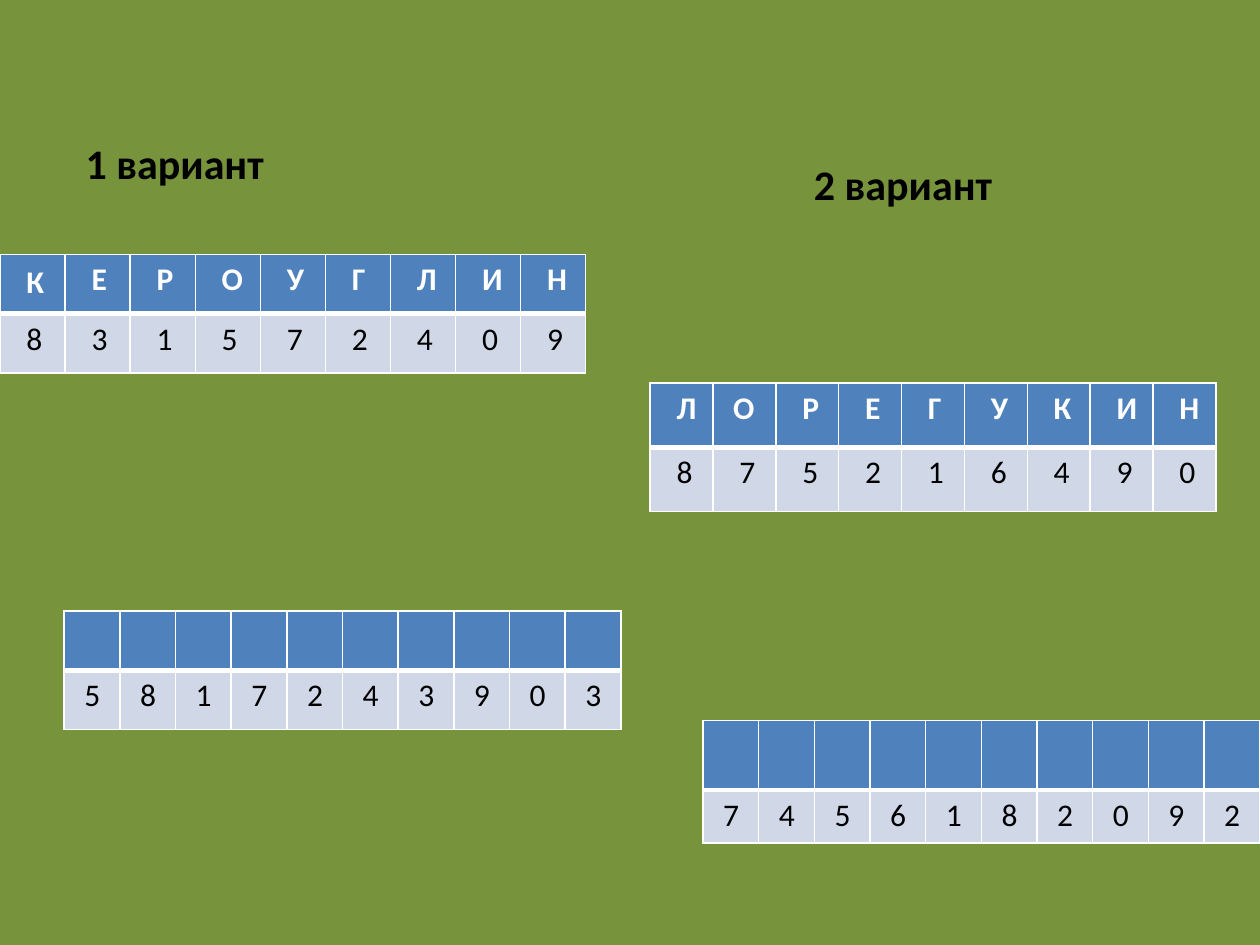
import pptx
import pptx.dml.color
import pptx.enum.text
import pptx.oxml
import pptx.oxml.ns
import pptx.util

Inches = pptx.util.Inches
RGBColor = pptx.dml.color.RGBColor

GREEN = RGBColor(0x77, 0x93, 0x3C)
BLUE = RGBColor(0x4F, 0x81, 0xBD)
PALE_BLUE = RGBColor(0xD0, 0xD8, 0xE8)
WHITE = RGBColor(0xFF, 0xFF, 0xFF)
BLACK = RGBColor(0, 0, 0)

HEADER_FONT = {"name": "Calibri", "size": pptx.util.Pt(18), "bold": True}
BODY_FONT = {"name": "Calibri", "size": pptx.util.Pt(18), "bold": False}
HEADING_FONT = {"name": "Calibri", "size": pptx.util.Pt(24), "bold": True}

# Box (left, top, width, height), text, left text margin
HEADINGS = [
    ((0.5, 0.52, 4.42, 1.02), "1 вариант", 0.18),
    ((5.08, 0.92, 4.42, 0.79), "2 вариант", 1.38),
]

# Box (left, top, width), row heights, letters, digits, left cell margin
CIPHER_TABLES = [
    ((0.51, 4.85, 4.42), (0.47, 0.47), " " * 10, "5817243903", 0.16),
    ((5.16, 3.04, 4.49), (0.51, 0.51), "ЛОРЕГУКИН", "875216490", 0.21),
    ((0, 2.02, 4.65), (0.47, 0.47), "КЕРОУГЛИН", "831572409", 0.21),
    ((5.58, 5.72, 4.42), (0.55, 0.42), " " * 10, "7456182092", 0.16),
]


def write_text(paragraph, text, font_values, color):
    paragraph.text = text
    for name, value in font_values.items():
        setattr(paragraph.font, name, value)
    paragraph.font.color.rgb = color


def add_heading(slide, box, text, margin):
    shape = slide.shapes.add_textbox(*map(Inches, box))
    frame = shape.text_frame
    frame.word_wrap = True
    frame.vertical_anchor = pptx.enum.text.MSO_ANCHOR.BOTTOM
    frame.margin_left = Inches(margin)
    write_text(frame.paragraphs[0], text, HEADING_FONT, BLACK)


def add_borders(cell, widths):
    """Draw white cell edges; widths maps L, R, T and B to points."""
    properties = cell._tc.get_or_add_tcPr()
    for side, points in widths.items():
        properties.append(pptx.oxml.parse_xml(
            f'<a:ln{side} {pptx.oxml.ns.nsdecls("a")} w="{pptx.util.Pt(points)}">'
            f'<a:solidFill><a:srgbClr val="{WHITE}"/></a:solidFill></a:ln{side}>'))


def add_cipher_table(slide, box, row_heights, letters, digits, margin):
    """Place a row of letters above the row of digits that stand for them."""
    left, top, width = box
    frame = slide.shapes.add_table(
        2, len(digits), Inches(left), Inches(top), Inches(width), Inches(sum(row_heights)))
    table = frame.table
    for row, height in zip(table.rows, row_heights):
        row.height = Inches(height)
    for column in table.columns:
        column.width = Inches(width / len(digits))
    row_styles = [
        (letters, HEADER_FONT, WHITE, BLUE, {"L": 1, "R": 1, "T": 1, "B": 3}),
        (digits, BODY_FONT, BLACK, PALE_BLUE, {"L": 1, "R": 1, "T": 3, "B": 1}),
    ]
    for row, (text, font, color, fill, borders) in zip(table.rows, row_styles):
        for cell, character in zip(row.cells, text):
            cell.margin_left = Inches(margin)
            cell.margin_right = Inches(0.05)
            add_borders(cell, borders)
            cell.fill.solid()
            cell.fill.fore_color.rgb = fill
            write_text(cell.text_frame.paragraphs[0], character.strip(), font, color)
    return table


def build_slide(presentation):
    slide = presentation.slides.add_slide(presentation.slide_layouts[6])
    slide.background.fill.solid()
    slide.background.fill.fore_color.rgb = GREEN
    for heading in HEADINGS:
        add_heading(slide, *heading)
    tables = [add_cipher_table(slide, *values) for values in CIPHER_TABLES]
    # Two letters stand slightly off the common position of their row
    tables[1].cell(0, 1).margin_left = Inches(0.16)
    tables[2].cell(0, 0).margin_top = Inches(0.07)


def main():
    presentation = pptx.Presentation()
    presentation.slide_width = Inches(10)
    presentation.slide_height = Inches(7.5)
    build_slide(presentation)
    presentation.save("out.pptx")


if __name__ == "__main__":
    main()
